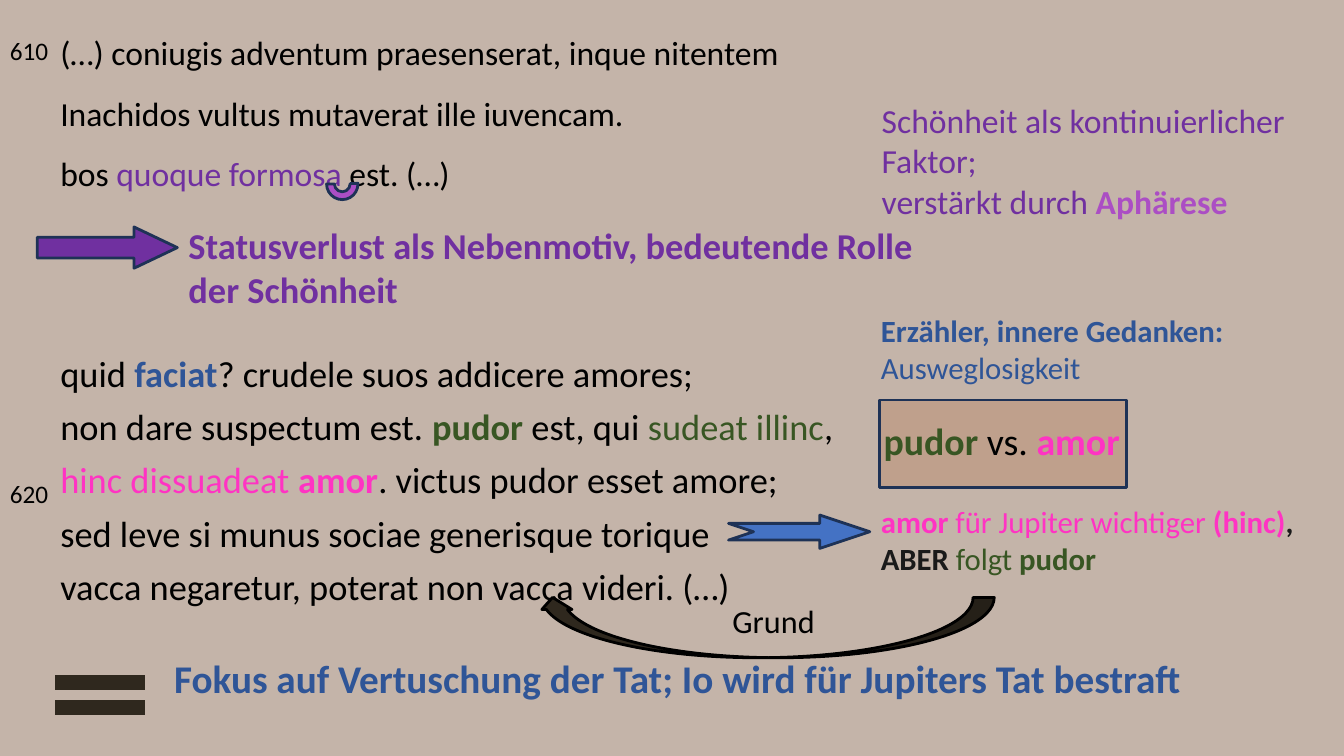
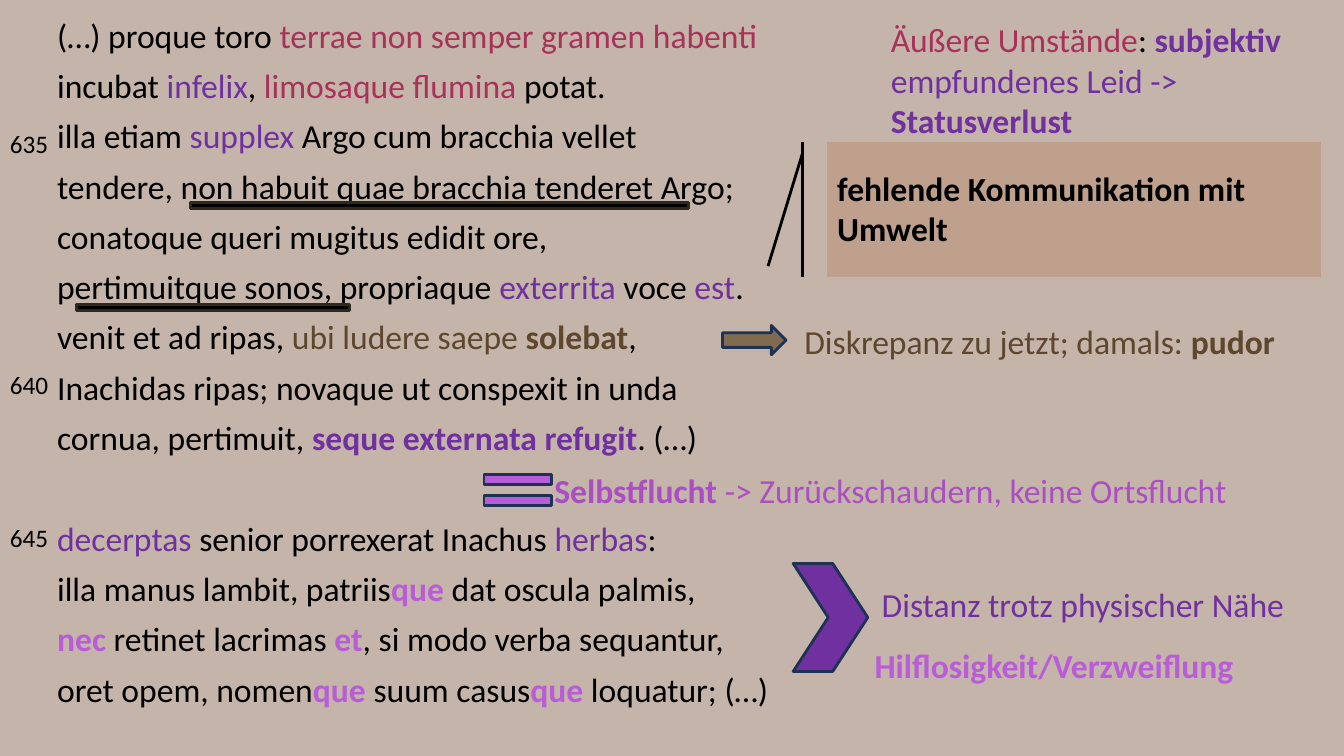
from pptx import Presentation
from pptx.dml.color import RGBColor
from pptx.enum.shapes import MSO_SHAPE as Shape
from pptx.util import Cm, Pt

hex_color = RGBColor.from_string

FONT = "Calibri"
BACKGROUND = "C4B4A9"
PANEL = "BFA08C"
BLACK = "000000"
INK = "1A1A1A"
OUTLINE = "1E3256"
DARK = "2F281E"
PURPLE = "7030A0"
ORCHID = "AB4EC4"
LILAC = "B95CD8"
BLUE = "2F5597"
GREEN = "385623"
PINK = "FF33C3"
RED = "A8325A"
BROWN = "5F472E"

PLAIN = {}
WIDE = {"line_spacing": 1.5}
VERSE = {"line_spacing": 0.9, "space_before": Pt(10)}
STANZA = {"line_spacing": 0.9, "space_before": Pt(46)}


def add_text(slide, box, size, paragraphs, style=PLAIN, breaks=()):
    frame = slide.shapes.add_textbox(*[Cm(length) for length in box]).text_frame
    frame.word_wrap = True
    for index, runs in enumerate(paragraphs):
        paragraph = frame.add_paragraph() if index else frame.paragraphs[0]
        settings = dict(STANZA if index in breaks else style)
        if index == 0:
            settings["space_before"] = Pt(0)
        for name, value in settings.items():
            setattr(paragraph, name, value)
        for text, color, bold in runs:
            run = paragraph.add_run()
            run.text = text
            for name, value in {"name": FONT, "size": Pt(size), "bold": bold}.items():
                setattr(run.font, name, value)
            run.font.color.rgb = hex_color(color)


def add_figure(slide, kind, box, fill, line=OUTLINE, adjustments=(), rotation=0):
    shape = slide.shapes.add_shape(kind, *[Cm(length) for length in box])
    shape.shadow.inherit = False
    shape.rotation = rotation
    shape.fill.solid()
    shape.fill.fore_color.rgb = hex_color(fill)
    shape.line.color.rgb = hex_color(line)
    shape.line.width = Pt(2)
    for index, value in enumerate(adjustments):
        shape.adjustments[index] = value


presentation = Presentation()
presentation.slide_width = Cm(33.87)
presentation.slide_height = Cm(19.05)
background = presentation.slide_master.background.fill
background.solid()
background.fore_color.rgb = hex_color(BACKGROUND)
blank = presentation.slide_layouts[6]
rejection = presentation.slides.add_slide(blank)
isolation = presentation.slides.add_slide(blank)

line_numbers = [
    (rejection, 0.76, "610"),
    (rejection, 11.94, "620"),
    (isolation, 3.1, "635"),
    (isolation, 9.19, "640"),
    (isolation, 13.03, "645"),
]
for slide, top, number in line_numbers:
    add_text(slide, (0, top, 5.08, 1.02), 18, [[(number, BLACK, False)]])

add_figure(rejection, Shape.RECTANGLE, (22.17, 10.08, 6.22, 2.21), PANEL)

cow_verses = [
    [("(…) coniugis adventum praesenserat, inque nitentem", BLACK, False)],
    [("Inachidos vultus mutaverat ille iuvencam.", BLACK, False)],
    [("bos ", BLACK, False), ("quoque formosa", PURPLE, False), (" est. (…)", BLACK, False)],
]
add_text(rejection, (1.27, 0.18, 21.01, 5.97), 24, cow_verses, WIDE)

dilemma_verses = [
    [("quid ", BLACK, False), ("faciat", BLUE, True),
     ("? crudele suos addicere amores;", BLACK, False)],
    [("non dare suspectum est. ", BLACK, False), ("pudor", GREEN, True),
     (" est, qui ", BLACK, False), ("sudeat illinc", GREEN, False), (",", BLACK, False)],
    [("hinc dissuadeat ", PINK, False), ("amor", PINK, True),
     (". victus pudor esset amore;", BLACK, False)],
    [("sed leve si munus sociae generisque torique", BLACK, False)],
    [("vacca negaretur, poterat non vacca videri. (…)", BLACK, False)],
]
add_text(rejection, (1.27, 8.84, 29.21, 5.26), 26, dilemma_verses, VERSE)

rejection_notes = [
    ((21.97, 2.39, 10.85, 3.3), 24, [
        [("Schönheit als kontinuierlicher Faktor;", PURPLE, False)],
        [("verstärkt durch ", PURPLE, False), ("Aphärese", ORCHID, True)]]),
    ((4.5, 5.51, 18.87, 2.44), 26, [
        [("Statusverlust als Nebenmotiv, bedeutende Rolle der Schönheit", PURPLE, True)]]),
    ((21.95, 7.72, 11.91, 2.11), 22, [
        [("Erzähler, innere Gedanken: ", BLUE, True), ("Ausweglosigkeit", BLUE, False)]]),
    ((22.02, 10.39, 9.73, 1.4), 27, [
        [("pudor", GREEN, True), (" vs. ", BLACK, False), ("amor", PINK, True)]]),
    ((21.95, 12.55, 11.91, 2.11), 22, [
        [("amor", PINK, True), (" für Jupiter wichtiger ", PINK, False), ("(hinc)", PINK, True),
         (", ABER ", INK, True), ("folgt ", GREEN, False), ("pudor", GREEN, True)]]),
    ((18.21, 15.04, 5.08, 1.22), 23, [[("Grund", BLACK, False)]]),
    ((4.14, 16.36, 27.53, 2.62), 28, [
        [("Fokus auf Vertuschung der Tat; Io wird für Jupiters Tat bestraft", BLUE, True)]]),
]
for box, size, paragraphs in rejection_notes:
    add_text(rejection, box, size, paragraphs)

rejection_figures = [
    (Shape.RIGHT_ARROW, (0.94, 5.72, 3.53, 1.04), PURPLE, OUTLINE, (0.5, 1.05), 0),
    (Shape.BLOCK_ARC, (8.23, 4.24, 0.79, 0.79), ORCHID, OUTLINE, (106.59, 0, 0.25), 180),
    (Shape.NOTCHED_RIGHT_ARROW, (18.36, 12.98, 3.56, 0.84), "4472C4", OUTLINE, (0.5, 1.5), 0),
    (Shape.CURVED_LEFT_ARROW, (18.54, 10.06, 1.52, 11.51), DARK, BLACK, (0.35, 0.5, 0.2), 90),
    (Shape.MATH_EQUAL, (0.94, 15.93, 3.18, 3.18), DARK, BACKGROUND, (0.14, 0.06), 0),
]
for figure in rejection_figures:
    add_figure(rejection, *figure)

add_figure(isolation, Shape.LINE_CALLOUT_1_ACCENT_BAR, (20.85, 3.58, 12.45, 3.4), PANEL, BLACK,
           (0.08, -0.05, 0.92, -0.12))

isolation_verses = [
    [("(…) proque toro ", BLACK, False), ("terrae non semper gramen habenti", RED, False)],
    [("incubat ", BLACK, False), ("infelix", PURPLE, False), (", ", BLACK, False),
     ("limosaque flumina", RED, False), (" potat.", BLACK, False)],
    [("illa etiam ", BLACK, False), ("supplex", PURPLE, False),
     (" Argo cum bracchia vellet", BLACK, False)],
    [("tendere, non habuit quae bracchia tenderet Argo;", BLACK, False)],
    [("conatoque queri mugitus edidit ore,", BLACK, False)],
    [("pertimuitque sonos, propriaque ", BLACK, False), ("exterrita", PURPLE, False),
     (" voce ", BLACK, False), ("est", PURPLE, False), (".", BLACK, False)],
    [("venit et ad ripas, ", BLACK, False), ("ubi ludere saepe ", BROWN, False),
     ("solebat", BROWN, True), (",", BLACK, False)],
    [("Inachidas ripas; novaque ut conspexit in unda", BLACK, False)],
    [("cornua, pertimuit, ", BLACK, False), ("seque externata refugit", PURPLE, True),
     (". (…)", BLACK, False)],
    [("decerptas", PURPLE, False), (" senior porrexerat Inachus ", BLACK, False),
     ("herbas", PURPLE, False), (":", BLACK, False)],
    [("illa manus lambit, patriis", BLACK, False), ("que", LILAC, True),
     (" dat oscula palmis,", BLACK, False)],
    [("nec", LILAC, True), (" retinet lacrimas ", BLACK, False), ("et", LILAC, True),
     (", si modo verba sequantur,", BLACK, False)],
    [("oret opem, nomen", BLACK, False), ("que", LILAC, True), (" suum casus", BLACK, False),
     ("que", LILAC, True), (" loquatur; (…)", BLACK, False)],
]
add_text(isolation, (1.19, 0.36, 29.67, 18.34), 24, isolation_verses, VERSE, breaks=(9,))

isolation_notes = [
    ((22.2, 0.36, 11.6, 3.3), [
        ("Äußere Umstände", RED, False), (": ", BLACK, False), ("subjektiv", PURPLE, True),
        (" empfundenes Leid -> ", PURPLE, False), ("Statusverlust", PURPLE, True)]),
    ((20.85, 4.11, 12.4, 2.29), [("fehlende Kommunikation mit Umwelt", BLACK, True)]),
    ((20.02, 7.95, 13.8, 1.27), [
        ("Diskrepanz zu jetzt; damals: ", BROWN, False), ("pudor", BROWN, True)]),
    ((13.72, 11.71, 20.1, 1.27), [
        ("Selbstflucht", ORCHID, True),
        (" -> Zurückschaudern, keine Ortsflucht", ORCHID, False)]),
    ((21.97, 14.6, 11.8, 1.27), [("Distanz trotz physischer Nähe", PURPLE, False)]),
    ((21.79, 16.13, 11.8, 1.27), [("Hilflosigkeit/Verzweiflung", LILAC, True)]),
]
for box, runs in isolation_notes:
    add_text(isolation, box, 24, [runs])

isolation_figures = [
    (Shape.RIGHT_ARROW, (18.21, 8.2, 1.6, 0.74), "7F6C50", OUTLINE, (0.5, 0.5)),
    (Shape.MATH_EQUAL, (11.89, 11.2, 2.31, 2.31), LILAC, OUTLINE, (0.11, 0.12)),
    (Shape.MATH_MINUS, (2.54, 2.64, 17.07, 5.08), BLACK, DARK, (0.03,)),
    (Shape.MATH_MINUS, (0.69, 5.21, 9.35, 5.08), BLACK, DARK, (0.03,)),
    (Shape.CHEVRON, (19.99, 14.2, 1.88, 2.72), PURPLE, OUTLINE, (0.47,)),
]
for figure in isolation_figures:
    add_figure(isolation, *figure)

presentation.save("out.pptx")
